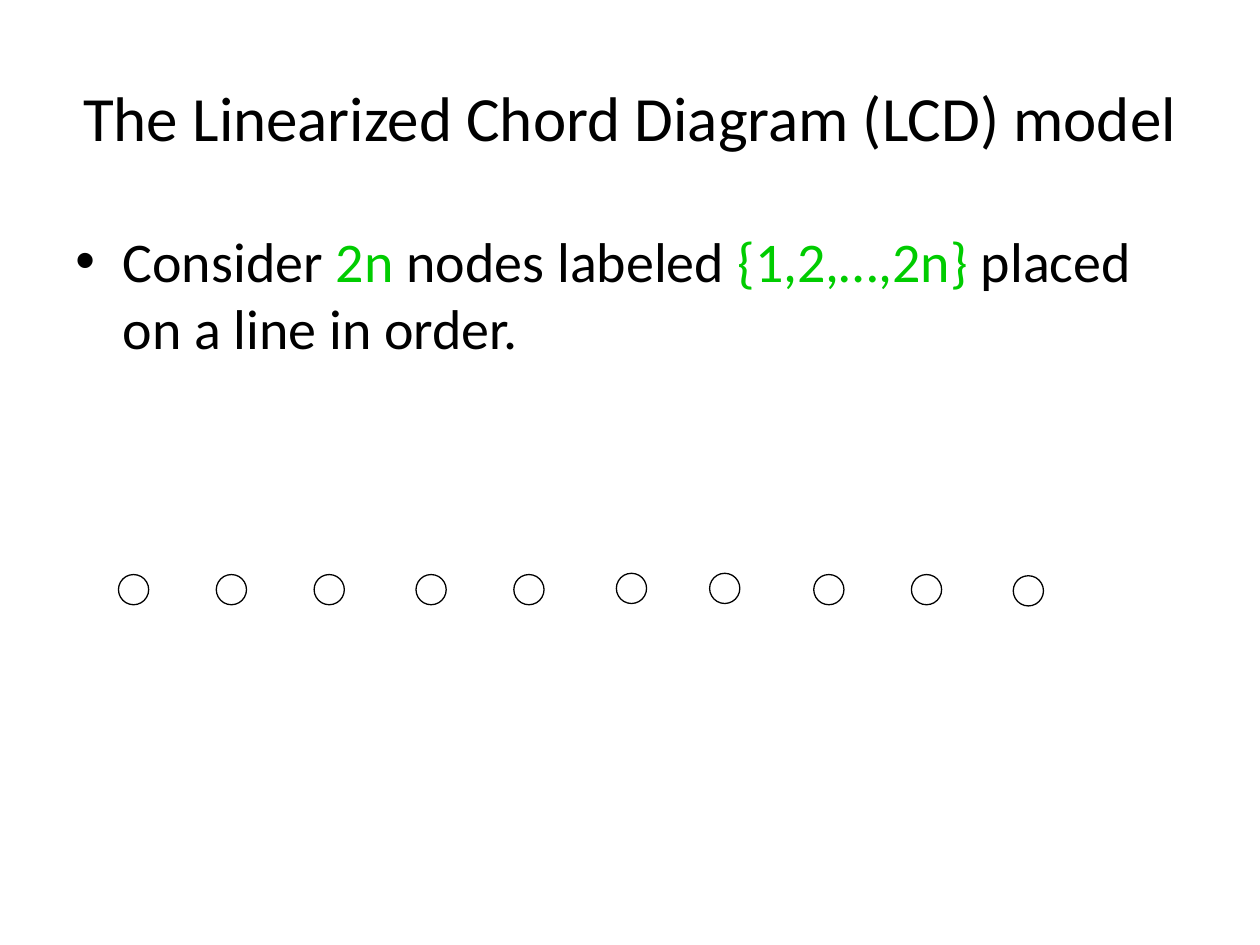
"""Build the slide on the Linearized Chord Diagram model."""
from lxml.etree import SubElement
from pptx import Presentation
from pptx.dml.color import RGBColor
from pptx.enum.shapes import MSO_SHAPE as Preset
from pptx.enum.text import MSO_ANCHOR as Anchor, PP_ALIGN as Align
from pptx.oxml.ns import qn
from pptx.util import Pt

BLACK = RGBColor(0x00, 0x00, 0x00)
GREEN = RGBColor(0x00, 0xCC, 0x00)

presentation = Presentation()
presentation.slide_width = Pt(720)
presentation.slide_height = Pt(540)
slide = presentation.slides.add_slide(presentation.slide_layouts[6])


def add_text(runs, *, top, height, size, anchor=Anchor.TOP, align=Align.LEFT):
    box = slide.shapes.add_textbox(Pt(36), Pt(top), Pt(648), Pt(height))
    frame = box.text_frame
    frame.word_wrap = True
    frame.vertical_anchor = anchor
    paragraph = frame.paragraphs[0]
    paragraph.alignment = align
    for text, color in runs:
        run = paragraph.add_run()
        run.text = text
        run.font.name = "Calibri"
        run.font.size = Pt(size)
        run.font.color.rgb = color
    return paragraph


add_text([("The Linearized Chord Diagram (LCD) model", BLACK)],
         top=21.6, height=90, size=36, anchor=Anchor.MIDDLE, align=Align.CENTER)

bullet_runs = [
    ("Consider ", BLACK),
    ("2n", GREEN),
    (" nodes labeled ", BLACK),
    ("{1,2,…,2n}", GREEN),
    (" placed on a line in order.", BLACK),
]
bullet = add_text(bullet_runs, top=126, height=356.4, size=32)
bullet.space_before = Pt(6.4)
properties = bullet._p.get_or_add_pPr()
properties.set("marL", str(Pt(27)))
properties.set("indent", str(Pt(-27)))
SubElement(properties, qn("a:buFont"), typeface="Arial")
SubElement(properties, qn("a:buChar"), char="•")

NODE_SIZE = 17.25
node_positions = [
    (67.7, 328.3), (123.6, 328.3), (179.5, 328.3), (237.7, 328.3), (293.6, 328.3),
    (352.2, 327.6), (405.5, 327.6), (465, 328.3), (520.8, 328.3), (579, 329),
]
for left, top in node_positions:
    node = slide.shapes.add_shape(Preset.OVAL, Pt(left), Pt(top), Pt(NODE_SIZE), Pt(NODE_SIZE))
    node.shadow.inherit = False
    node.fill.background()
    node.line.color.rgb = BLACK
    node.line.width = Pt(0.75)

presentation.save("out.pptx")
